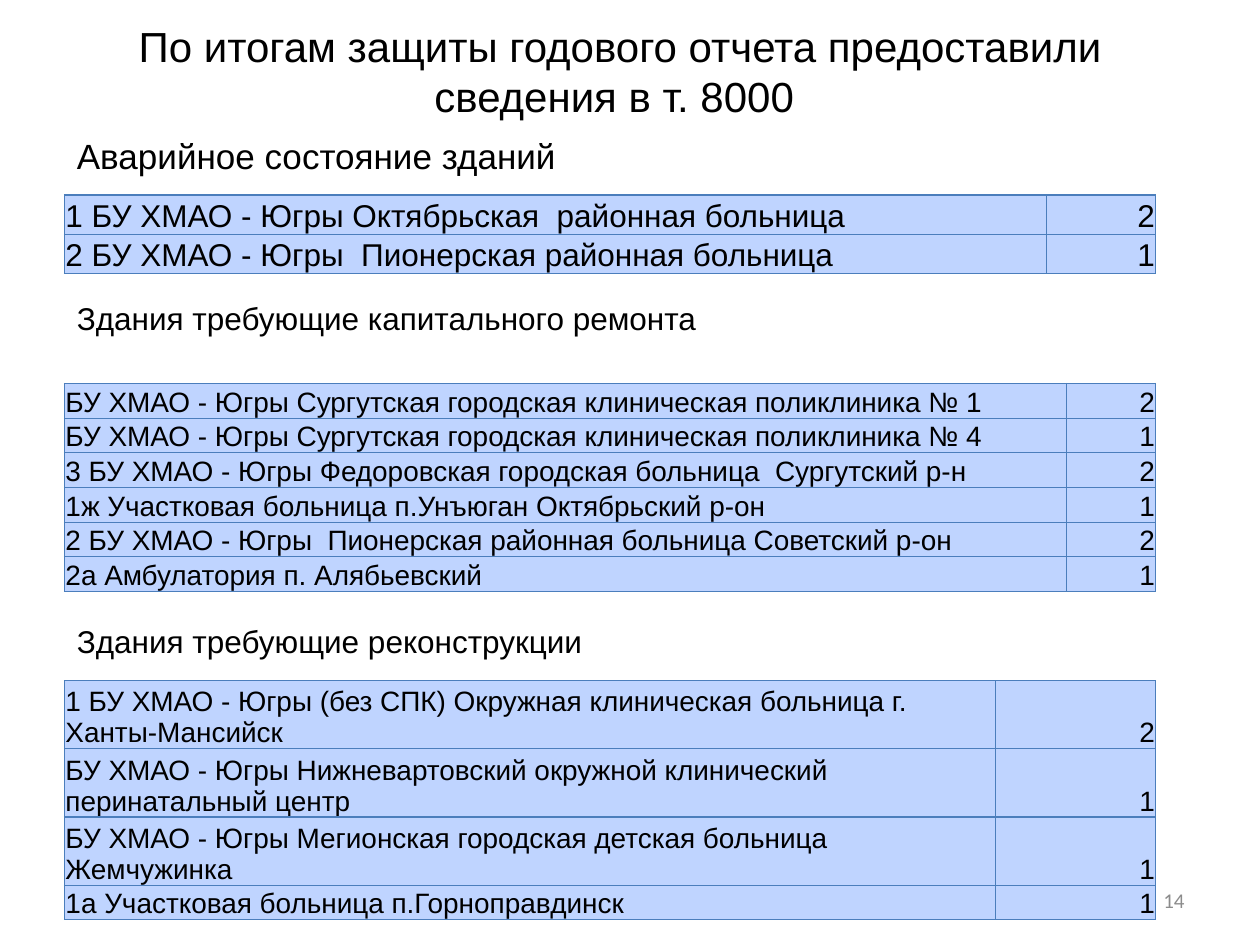
from lxml import etree
from pptx import Presentation
from pptx.dml.color import RGBColor
from pptx.enum.text import MSO_ANCHOR, PP_ALIGN
from pptx.oxml.ns import qn
from pptx.util import Cm, Pt

LEFT, CENTER, RIGHT = PP_ALIGN.LEFT, PP_ALIGN.CENTER, PP_ALIGN.RIGHT
TOP, MIDDLE, BOTTOM = MSO_ANCHOR.TOP, MSO_ANCHOR.MIDDLE, MSO_ANCHOR.BOTTOM
BLACK = RGBColor(0x00, 0x00, 0x00)
GRAY = RGBColor(0x8C, 0x8C, 0x8C)
CELL_BLUE = RGBColor(0xBF, 0xD4, 0xFF)
BORDER_BLUE = RGBColor(0x4B, 0x7E, 0xBC)

MARGIN = 1.3
TABLE_WIDTH = 22
SINGLE, DOUBLE = 0.7, 1.37

SECTIONS = [
    dict(heading="Аварийное состояние зданий", heading_top=2.59, heading_size=20,
         table_top=3.93, count_width=2.2, size=18, rows=[
             ("1 БУ ХМАО - Югры Октябрьская  районная больница", 2, 0.79),
             ("2 БУ ХМАО - Югры  Пионерская районная больница", 1, 0.79),
         ]),
    dict(heading="Здания требующие капитального ремонта", heading_top=5.9, heading_size=18,
         table_top=7.73, count_width=1.8, size=16, rows=[
             ("БУ ХМАО - Югры Сургутская городская клиническая поликлиника № 1", 2, SINGLE),
             ("БУ ХМАО - Югры Сургутская городская клиническая поликлиника № 4", 1, SINGLE),
             ("3 БУ ХМАО - Югры Федоровская городская больница  Сургутский р-н", 2, SINGLE),
             ("1ж Участковая больница п.Унъюган Октябрьский р-он", 1, SINGLE),
             ("2 БУ ХМАО - Югры  Пионерская районная больница Советский р-он", 2, SINGLE),
             ("2а Амбулатория п. Алябьевский", 1, SINGLE),
         ]),
    dict(heading="Здания требующие реконструкции", heading_top=12.42, heading_size=18,
         table_top=13.72, count_width=3.23, size=16, rows=[
             ("1 БУ ХМАО - Югры (без СПК) Окружная клиническая больница г. Ханты-Мансийск", 2, DOUBLE),
             ("БУ ХМАО - Югры Нижневартовский окружной клинический перинатальный центр", 1, DOUBLE),
             ("БУ ХМАО - Югры Мегионская городская детская больница Жемчужинка", 1, DOUBLE),
             ("1а Участковая больница п.Горноправдинск", 1, SINGLE),
         ]),
]


def write_text(frame, text, size, align=LEFT, font="Arial", color=BLACK):
    para = frame.paragraphs[0]
    para.alignment = align
    span = para.add_run()
    span.text = text
    span.font.size = Pt(size)
    span.font.name = font
    span.font.color.rgb = color


def add_text(page, box, text, anchor=TOP, **text_format):
    frame = page.shapes.add_textbox(*map(Cm, box)).text_frame
    frame.word_wrap = True
    frame.vertical_anchor = anchor
    write_text(frame, text, **text_format)


def style_cell(cell):
    cell.vertical_anchor = BOTTOM
    cell.margin_left = cell.margin_right = cell.margin_top = Cm(0.02)
    cell.margin_bottom = 0
    properties = cell._tc.get_or_add_tcPr()
    for side in ("a:lnL", "a:lnR", "a:lnT", "a:lnB"):
        line = etree.SubElement(properties, qn(side), w=str(Pt(0.75)))
        fill = etree.SubElement(line, qn("a:solidFill"))
        etree.SubElement(fill, qn("a:srgbClr"), val=str(BORDER_BLUE))
    cell.fill.solid()
    cell.fill.fore_color.rgb = CELL_BLUE


def add_count_table(page, box, rows, count_width, size):
    left, top, width = box
    height = sum(row_height for _, _, row_height in rows)
    table = page.shapes.add_table(len(rows), 2, Cm(left), Cm(top), Cm(width), Cm(height)).table
    table.first_row = False
    table.horz_banding = False
    table.columns[0].width = Cm(width - count_width)
    table.columns[1].width = Cm(count_width)
    for index, (name, count, row_height) in enumerate(rows):
        table.rows[index].height = Cm(row_height)
        for column, (text, align) in enumerate([(name, LEFT), (str(count), RIGHT)]):
            cell = table.cell(index, column)
            style_cell(cell)
            write_text(cell.text_frame, text, size=size, align=align)


def add_section(page, left, width, heading, heading_top, heading_size,
                table_top, count_width, size, rows):
    add_text(page, (left, heading_top, width, 1.1), heading, size=heading_size)
    add_count_table(page, (left, table_top, width), rows, count_width, size)


def main():
    deck = Presentation()
    deck.slide_width, deck.slide_height = Cm(25.4), Cm(19.05)
    page = deck.slides.add_slide(deck.slide_layouts[6])
    add_text(page, (18.2, 17.65, 5.93, 1.01), "14", anchor=MIDDLE,
             size=12, align=RIGHT, font="Calibri", color=GRAY)
    for section in SECTIONS:
        add_section(page, MARGIN, TABLE_WIDTH, **section)
    add_text(page, (0.7, 0.28, 23.6, 2.3),
             "По итогам защиты годового отчета предоставили сведения в т. 8000 ",
             size=24, align=CENTER)
    deck.save("out.pptx")


if __name__ == "__main__":
    main()
